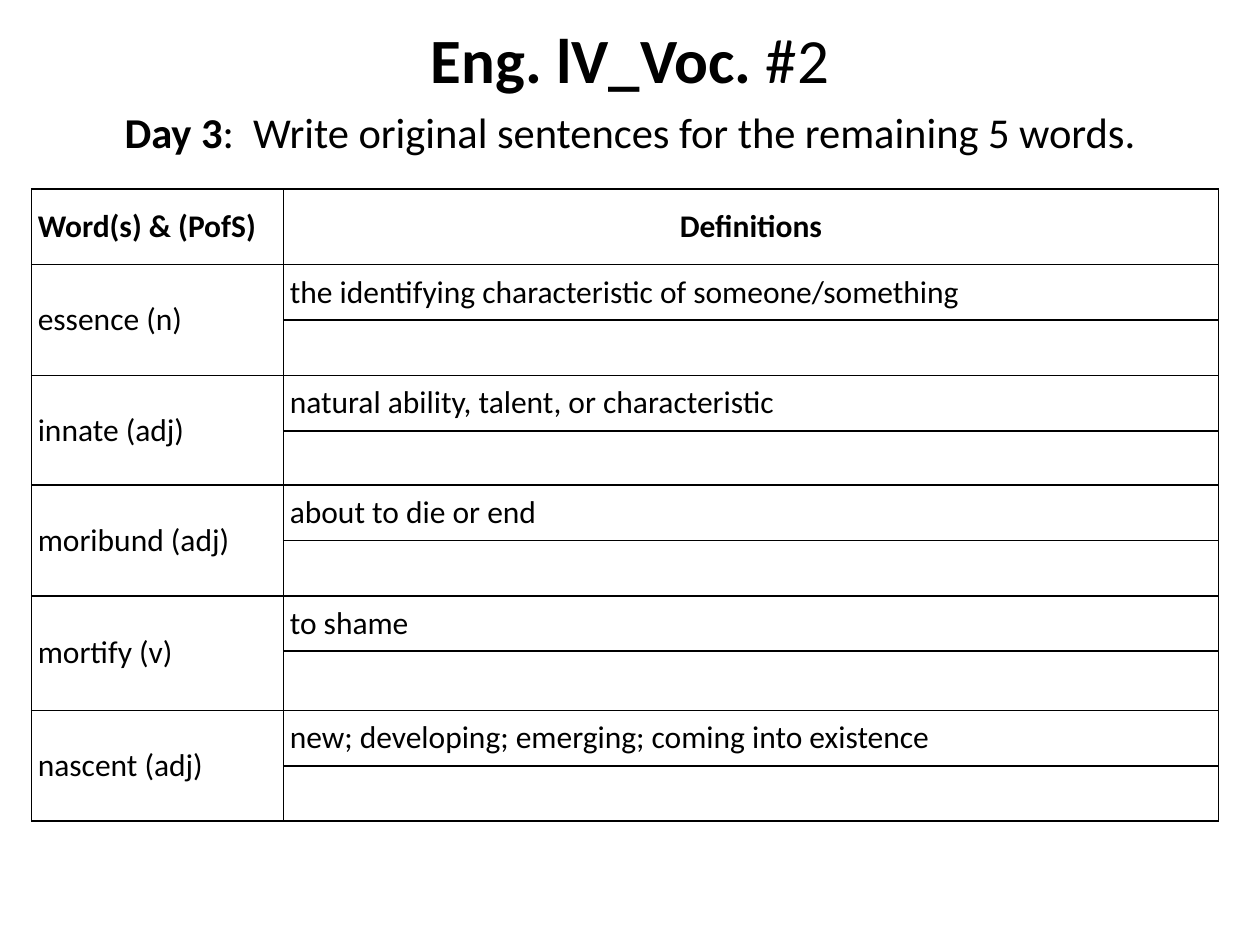
from lxml import etree
from pptx import Presentation
from pptx.dml.color import RGBColor
from pptx.enum.text import MSO_ANCHOR, MSO_AUTO_SIZE, PP_ALIGN
from pptx.oxml.ns import qn
from pptx.util import Inches, Pt

CENTER, LEFT = PP_ALIGN.CENTER, PP_ALIGN.LEFT
MIDDLE = MSO_ANCHOR.MIDDLE
NO_AUTOFIT = MSO_AUTO_SIZE.NONE
BLACK = "000000"
TITLE_ONLY = 5

WORDS = [
    ("essence (n)", "the identifying characteristic of someone/something"),
    ("innate (adj)", "natural ability, talent, or characteristic"),
    ("moribund (adj)", "about to die or end"),
    ("mortify (v)", "to shame"),
    ("nascent (adj)", "new; developing; emerging; coming into existence"),
]


def write(tf, runs, size, align=LEFT):
    """Fill the first paragraph with (text, bold) runs."""
    p = tf.paragraphs[0]
    p.alignment = align
    p.font.name = "Calibri"
    p.font.size = Pt(size)
    p.font.color.rgb = RGBColor.from_string(BLACK)
    for text, bold in runs:
        r = p.add_run()
        r.text = text
        r.font.bold = bold


def add_borders(cell):
    tcPr = cell._tc.get_or_add_tcPr()
    for side in ("lnL", "lnR", "lnT", "lnB"):
        ln = etree.SubElement(tcPr, qn(f"a:{side}"), w=str(Pt(1)))
        fill = etree.SubElement(ln, qn("a:solidFill"))
        etree.SubElement(fill, qn("a:srgbClr"), val=BLACK)


prs = Presentation()
prs.slide_width, prs.slide_height = Inches(10), Inches(7.5)
s = prs.slides.add_slide(prs.slide_layouts[TITLE_ONLY])

# Day's instruction
title = s.shapes.title
title.left, title.top = Inches(0.75), Inches(0.67)
title.width, title.height = Inches(8.5), Inches(0.75)
tf = title.text_frame
tf.auto_size = NO_AUTOFIT
tf.vertical_anchor = MIDDLE
write(tf, [("Day 3", True),
           (":  Write original sentences for the remaining 5 words.", False)], 24.3, CENTER)

# Course heading
heading = s.shapes.add_textbox(Inches(0.5), Inches(0), Inches(9), Inches(0.87))
tf = heading.text_frame
tf.word_wrap = True
tf.vertical_anchor = MIDDLE
tf.margin_top = Inches(0.11)
write(tf, [("Eng. lV_Voc. ", True), ("#2", False)], 36, CENTER)

# Vocabulary table: each word spans a definition row and a blank writing row
row_count = 1 + 2 * len(WORDS)
table = s.shapes.add_table(row_count, 2, Inches(0.25), Inches(1.5),
                           Inches(9.42), Inches(5)).table
table.first_row = table.horz_banding = False
table.columns[0].width, table.columns[1].width = Inches(2), Inches(7.42)
for row in table.rows:
    row.height = Inches(0.44)
table.rows[0].height = Inches(0.6)
table.rows[4].height = Inches(0.43)
table.rows[8].height = Inches(0.47)

for cell in table.iter_cells():
    cell.vertical_anchor = MIDDLE
    cell.margin_left = cell.margin_right = Inches(0.05)
    cell.margin_top = cell.margin_bottom = 0
    add_borders(cell)
    cell.fill.background()

write(table.cell(0, 0).text_frame, [("Word(s) & (PofS)", True)], 18)
write(table.cell(0, 1).text_frame, [("Definitions", True)], 18, CENTER)
for i, (word, definition) in enumerate(WORDS):
    top = 1 + 2 * i
    table.cell(top, 0).merge(table.cell(top + 1, 0))
    write(table.cell(top, 0).text_frame, [(word, False)], 18)
    write(table.cell(top, 1).text_frame, [(definition, False)], 18)

prs.save("out.pptx")
